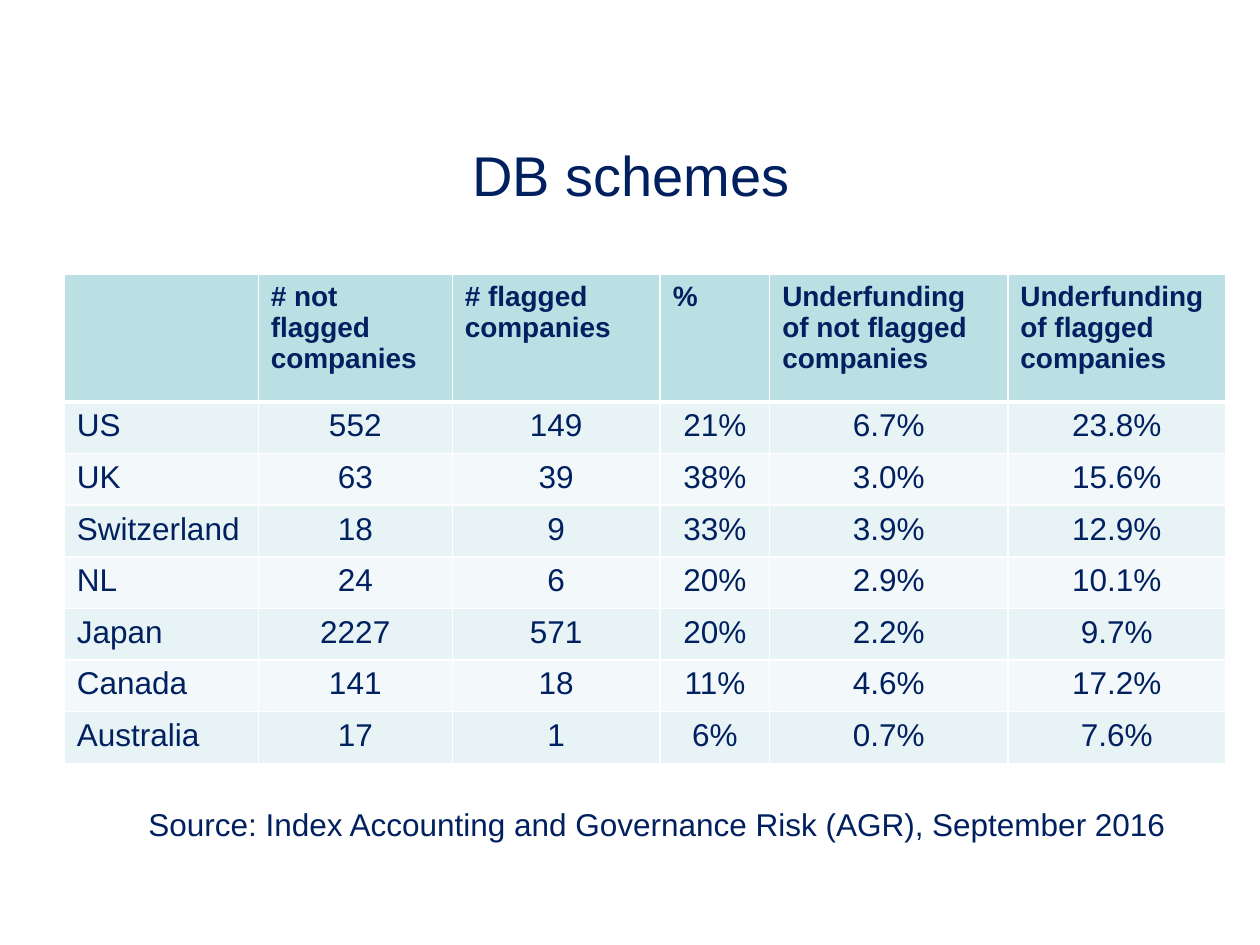
from lxml import etree
from pptx import Presentation
from pptx.dml.color import RGBColor
from pptx.enum.text import MSO_ANCHOR, PP_ALIGN
from pptx.oxml.ns import qn
from pptx.util import Inches, Pt

LEFT, CENTER = PP_ALIGN.LEFT, PP_ALIGN.CENTER
TOP, MIDDLE = MSO_ANCHOR.TOP, MSO_ANCHOR.MIDDLE

NAVY = RGBColor(0x00, 0x20, 0x60)
WHITE = RGBColor(0xFF, 0xFF, 0xFF)
HEADER_TEAL = RGBColor(0xBB, 0xE0, 0xE3)
BANDS = (RGBColor(0xE7, 0xF3, 0xF4), RGBColor(0xF3, 0xF9, 0xFA))

HEADINGS = ("", "# not flagged\ncompanies", "# flagged companies", "%",
            "Underfunding of not flagged\ncompanies",
            "Underfunding of flagged companies")
SCHEMES = (
    ("US", "552", "149", "21%", "6.7%", "23.8%"),
    ("UK", "63", "39", "38%", "3.0%", "15.6%"),
    ("Switzerland", "18", "9", "33%", "3.9%", "12.9%"),
    ("NL", "24", "6", "20%", "2.9%", "10.1%"),
    ("Japan", "2227", "571", "20%", "2.2%", "9.7%"),
    ("Canada", "141", "18", "11%", "4.6%", "17.2%"),
    ("Australia", "17", "1", "6%", "0.7%", "7.6%"),
)
COLUMN_WIDTHS = (1.54, 1.54, 1.65, 0.87, 1.89, 1.73)
HEADER_HEIGHT, ROW_HEIGHT = 1.01, 0.41


class SlideBuilder:
    """Holds the text style and the slide being filled."""

    def __init__(self, slide, font="Arial", color=NAVY):
        self.slide = slide
        self.font = font
        self.color = color

    def style(self, frame, size, align=LEFT, bold=False):
        for paragraph in frame.paragraphs:
            paragraph.alignment = align
            paragraph.font.size = Pt(size)
            for run in paragraph.runs:
                run.font.name = self.font
                run.font.size = Pt(size)
                run.font.bold = bold
                run.font.color.rgb = self.color

    def text(self, words, left, top, width, height, size,
             align=LEFT, anchor=TOP, wrap=True):
        box = self.slide.shapes.add_textbox(
            Inches(left), Inches(top), Inches(width), Inches(height))
        frame = box.text_frame
        frame.text = words
        frame.word_wrap = wrap
        frame.vertical_anchor = anchor
        self.style(frame, size, align)

    def borders(self, cell, top=1, bottom=1):
        properties = cell._tc.get_or_add_tcPr()
        for side, points in (("L", 1), ("R", 1), ("T", top), ("B", bottom)):
            line = etree.SubElement(properties, qn(f"a:ln{side}"), w=str(Pt(points)))
            fill = etree.SubElement(line, qn("a:solidFill"))
            etree.SubElement(fill, qn("a:srgbClr"), val=str(WHITE))

    def table(self, headings, rows, left, top, widths, header_height, row_height):
        heights = [header_height] + [row_height] * len(rows)
        table = self.slide.shapes.add_table(
            len(heights), len(widths), Inches(left), Inches(top),
            Inches(sum(widths)), Inches(sum(heights))).table
        for column, width in zip(table.columns, widths):
            column.width = Inches(width)
        for r, (values, height) in enumerate(zip((headings, *rows), heights)):
            table.rows[r].height = Inches(height)
            header = r == 0
            for c, value in enumerate(values):
                cell = table.cell(r, c)
                cell.text_frame.text = value
                self.style(cell.text_frame, 16 if header else 18,
                           LEFT if header or c == 0 else CENTER, header)
                # The rule under the header is thicker than the grid
                self.borders(cell, top=3 if r == 1 else 1, bottom=3 if header else 1)
                cell.fill.solid()
                cell.fill.fore_color.rgb = HEADER_TEAL if header else BANDS[(r - 1) % 2]


def main():
    deck = Presentation()
    deck.slide_width, deck.slide_height = Inches(10), Inches(7.5)
    builder = SlideBuilder(deck.slides.add_slide(deck.slide_layouts[6]))

    # Title
    builder.text("DB schemes", 0.51, 0.76, 9, 1.25, 32, CENTER, MIDDLE)

    # Flagged and not flagged companies by country
    builder.table(HEADINGS, SCHEMES, 0.51, 2.18, COLUMN_WIDTHS,
                  HEADER_HEIGHT, ROW_HEIGHT)

    # Source line
    builder.text("Source: Index Accounting and Governance Risk (AGR), September 2016",
                 1.08, 6.34, 8.43, 0.4, 18, wrap=False)

    deck.save("out.pptx")


if __name__ == "__main__":
    main()
